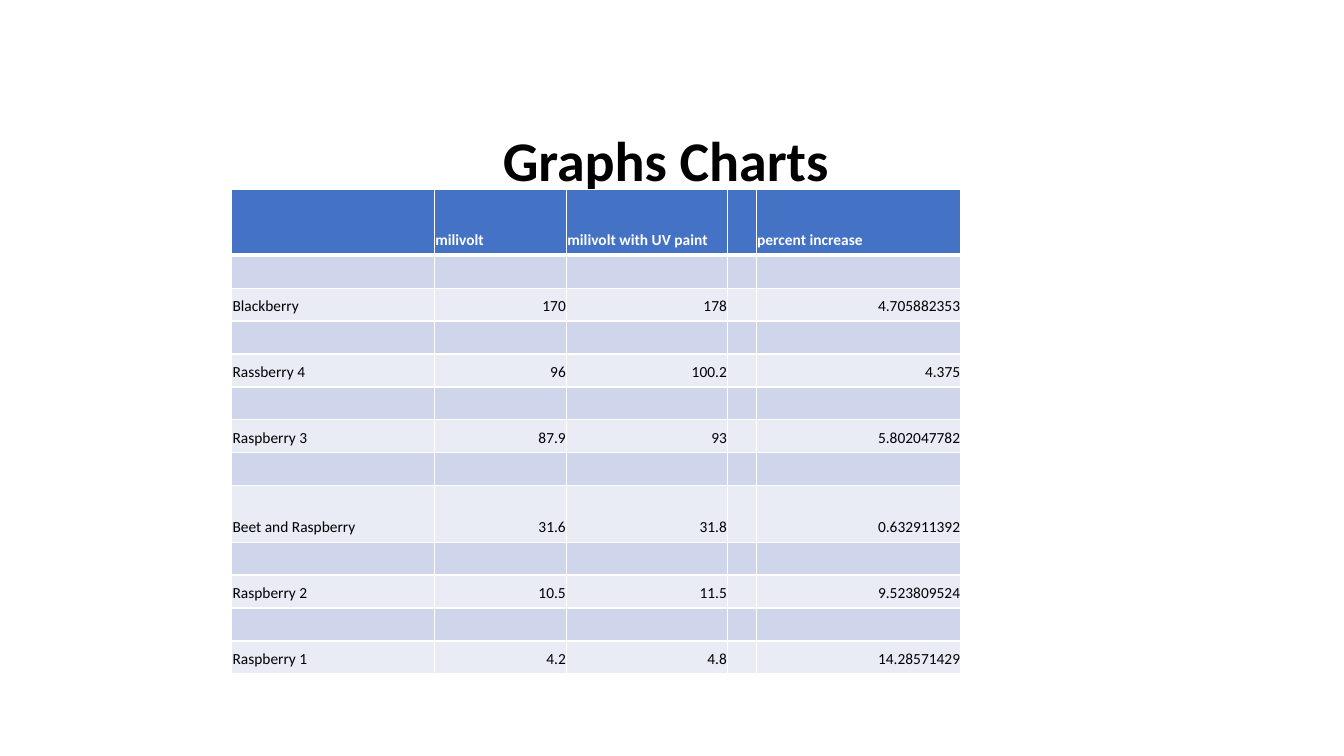
"""Build the slide with the berry voltage table."""
from lxml.etree import SubElement
from pptx import Presentation
from pptx.dml.color import RGBColor
from pptx.enum.text import MSO_ANCHOR as ANCHOR, PP_ALIGN as ALIGN
from pptx.oxml.ns import qn
from pptx.util import Cm, Pt


def rgb(color):
    return RGBColor.from_string(color)


def add_text(p, text, size, color, bold):
    r = p.add_run()
    r.text = text
    r.font.color.rgb = rgb(color)
    for name, value in {"name": "Calibri", "size": Pt(size), "bold": bold}.items():
        setattr(r.font, name, value)


prs = Presentation()
prs.slide_width, prs.slide_height = Cm(33.87), Cm(19.05)
s = prs.slides.add_slide(prs.slide_layouts[6])

tf = s.shapes.add_textbox(Cm(3.28), Cm(2.29), Cm(27.31), Cm(3.68)).text_frame
tf.word_wrap = True
tf.vertical_anchor = ANCHOR.MIDDLE
p = tf.paragraphs[0]
p.alignment = ALIGN.CENTER
p.line_spacing = 0.9
add_text(p, "Graphs Charts ", 40, "000000", True)

header = ["", "milivolt", "milivolt with UV paint", "", "percent increase"]
berries = [
    ["Blackberry", "170", "178", "", "4.705882353"],
    ["Rassberry 4", "96", "100.2", "", "4.375"],
    ["Raspberry 3", "87.9", "93", "", "5.802047782"],
    ["Beet and Raspberry", "31.6", "31.8", "", "0.632911392"],
    ["Raspberry 2", "10.5", "11.5", "", "9.523809524"],
    ["Raspberry 1", "4.2", "4.8", "", "14.28571429"],
]
rows = [header]
for berry in berries:
    rows += [[""] * len(header), berry]

col_widths = [5.11, 3.33, 4.06, 0.72, 5.16]
row_heights = [1.65] + [0.83] * 7 + [1.42] + [0.83] * 4
cell_format = {
    "vertical_anchor": ANCHOR.BOTTOM,
    "margin_left": Cm(0.02),
    "margin_right": Cm(0.02),
    "margin_top": Cm(0.02),
    "margin_bottom": Cm(0.13),
}

table = s.shapes.add_table(len(rows), len(header), Cm(5.84), Cm(4.78),
                           Cm(sum(col_widths)), Cm(sum(row_heights))).table
for col, width in zip(table.columns, col_widths):
    col.width = Cm(width)
for row, height in zip(table.rows, row_heights):
    row.height = Cm(height)

for i, values in enumerate(rows):
    is_header = i == 0
    fill = "4472C4" if is_header else "CFD5EA" if i % 2 else "E9EBF5"
    for j, value in enumerate(values):
        cell = table.cell(i, j)
        for name, setting in cell_format.items():
            setattr(cell, name, setting)
        for side in "LRTB":
            thick = (i, side) in [(0, "B"), (1, "T")]
            ln = SubElement(cell._tc.get_or_add_tcPr(), qn(f"a:ln{side}"),
                            w=str(Pt(3 if thick else 1)))
            SubElement(SubElement(ln, qn("a:solidFill")), qn("a:srgbClr"), val="FFFFFF")
        cell.fill.solid()
        cell.fill.fore_color.rgb = rgb(fill)
        p = cell.text_frame.paragraphs[0]
        p.alignment = ALIGN.LEFT if is_header or j == 0 else ALIGN.RIGHT
        if value:
            add_text(p, value, 11, "FFFFFF" if is_header else "000000", is_header)
        else:
            SubElement(p._p, qn("a:endParaRPr"), sz="1100")

prs.save("out.pptx")
